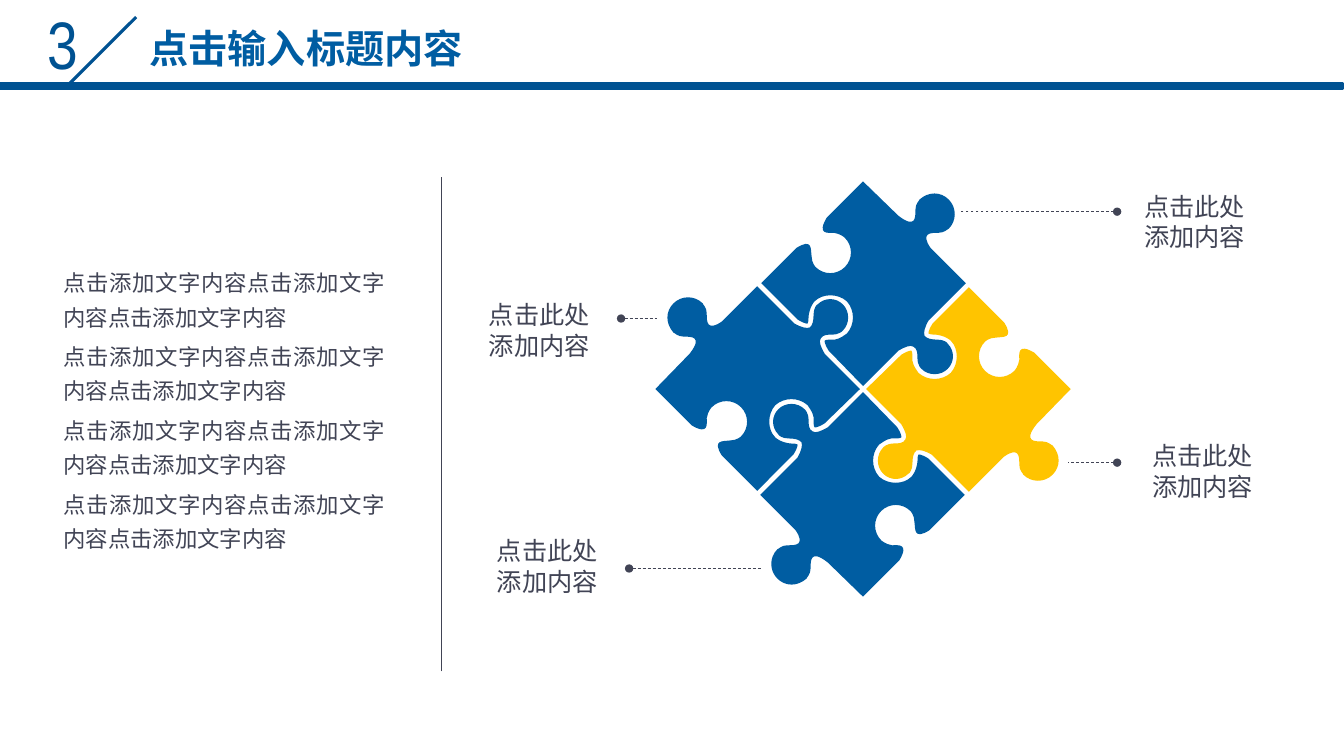
from pptx import Presentation
from pptx import util as u
from pptx.dml.color import RGBColor
from pptx.enum import dml, shapes, text
from pptx.oxml import ns, xmlchemy

Inches, Pt = u.Inches, u.Pt
CJK_FONT = "Noto Sans CJK SC"
BLUE, NAVY, YELLOW, GREY = "005DA2", "005292", "FFC400", "414455"

# Puzzle piece outline in inches: pairs are corners, sixes are Bezier curves
PUZZLE_CENTRE = (8.56, 3.86)
PIECE_START = (8.56, 1.8)
PIECE_OUTLINE = [
    # Upper right side, knob
    (8.91, 2.14),
    (9, 2.21, 9.04, 2.21, 9.06, 2.19), (9.08, 2.17, 9.08, 2.12, 9.08, 2.08),
    (9.08, 2.02, 9.12, 1.99, 9.12, 1.98), (9.21, 1.9, 9.33, 1.9, 9.41, 1.98),
    (9.49, 2.06, 9.49, 2.19, 9.41, 2.27), (9.4, 2.27, 9.37, 2.31, 9.31, 2.31),
    (9.27, 2.31, 9.22, 2.31, 9.2, 2.33), (9.18, 2.35, 9.18, 2.39, 9.23, 2.46),
    (9.58, 2.81),
    # Lower right side, knob
    (9.21, 3.18), (9.17, 3.25, 9.16, 3.3, 9.17, 3.33),
    (9.19, 3.36, 9.24, 3.37, 9.3, 3.37),
    (9.36, 3.37, 9.4, 3.4, 9.4, 3.41), (9.47, 3.48, 9.47, 3.59, 9.4, 3.66),
    (9.33, 3.73, 9.21, 3.73, 9.14, 3.66), (9.14, 3.66, 9.1, 3.63, 9.1, 3.55),
    (9.1, 3.51, 9.1, 3.46, 9.06, 3.44), (9.03, 3.42, 8.98, 3.44, 8.91, 3.48),
    (8.56, 3.83),
    # Lower left side, socket
    (8.22, 3.48), (8.17, 3.4, 8.18, 3.38, 8.18, 3.38),
    (8.19, 3.37, 8.22, 3.37, 8.28, 3.37),
    (8.34, 3.36, 8.38, 3.32, 8.4, 3.31), (8.48, 3.22, 8.48, 3.08, 8.4, 2.99),
    (8.31, 2.91, 8.16, 2.91, 8.08, 2.99), (8.07, 3, 8.03, 3.05, 8.02, 3.14),
    (8.02, 3.17, 8.02, 3.2, 8.01, 3.21), (8.01, 3.21, 7.99, 3.22, 7.91, 3.17),
    (7.55, 2.81),
    # Upper left side, socket
    (7.9, 2.46), (8.06, 2.36, 8.04, 2.47, 8.05, 2.54),
    (8.05, 2.61, 8.09, 2.65, 8.09, 2.65), (8.17, 2.73, 8.3, 2.73, 8.38, 2.65),
    (8.46, 2.57, 8.46, 2.44, 8.38, 2.36), (8.38, 2.36, 8.34, 2.32, 8.27, 2.31),
    (8.21, 2.31, 8.1, 2.33, 8.2, 2.16), (8.56, 1.8),
]


def colour(value):
    return RGBColor.from_string(value)


def format_text(frame, size, hex_colour, font=CJK_FONT, bold=False, spacing=None):
    for para in frame.paragraphs:
        if spacing:
            para.line_spacing = Pt(spacing)
        for span in para.runs:
            span.font.name, span.font.size = font, Pt(size)
            span.font.bold = bold
            span.font.color.rgb = colour(hex_colour)
            east_asian = xmlchemy.OxmlElement("a:ea")
            east_asian.set("typeface", font)
            span.font._element.find(ns.qn("a:latin")).addnext(east_asian)


def place(box, left, top, width, height):
    box.left, box.top = Inches(left), Inches(top)
    box.width, box.height = Inches(width), Inches(height)
    frame = box.text_frame
    frame.auto_size = text.MSO_AUTO_SIZE.NONE
    frame.vertical_anchor = text.MSO_ANCHOR.TOP
    frame.word_wrap = True
    return frame


def add_line(page, start, end, hex_colour, width, dotted_head=False):
    line = page.shapes.add_connector(
        shapes.MSO_CONNECTOR.STRAIGHT, *map(Inches, start + end))
    line.line.color.rgb = colour(hex_colour)
    line.line.width = Pt(width)
    if dotted_head:
        line.line.dash_style = dml.MSO_LINE.DASH
        head = xmlchemy.OxmlElement("a:headEnd")
        head.set("type", "oval")
        line.line._get_or_add_ln().append(head)
    line._element.spPr.append(xmlchemy.OxmlElement("a:effectLst"))


def turn(segment, quarter_turns):
    """Turn the points of a segment clockwise about the puzzle's centre."""
    centre_x, centre_y = PUZZLE_CENTRE
    turned = []
    for x, y in zip(segment[::2], segment[1::2]):
        dx, dy = x - centre_x, y - centre_y
        for _ in range(quarter_turns):
            dx, dy = -dy, dx
        turned.append((Inches(centre_x + dx), Inches(centre_y + dy)))
    return turned


def bend(piece, segments):
    """Replace the straight sides that have control points by curves."""
    sides = list(piece._element.iter(ns.qn("a:lnTo")))
    for side, points in zip(sides, segments):
        if len(points) == 1:
            continue
        curve = xmlchemy.OxmlElement("a:cubicBezTo")
        for x, y in points:
            point = xmlchemy.OxmlElement("a:pt")
            point.set("x", str(x - piece.left))
            point.set("y", str(y - piece.top))
            curve.append(point)
        side.getparent().replace(side, curve)


def add_piece(page, quarter_turns, hex_colour):
    segments = [turn(segment, quarter_turns) for segment in PIECE_OUTLINE]
    builder = page.shapes.build_freeform(*turn(PIECE_START, quarter_turns)[0])
    builder.add_line_segments([points[-1] for points in segments], close=True)
    piece = builder.convert_to_shape()
    bend(piece, segments)
    piece.shadow.inherit = False
    piece.fill.solid()
    piece.fill.fore_color.rgb = colour(hex_colour)
    piece.line.fill.background()


def add_label(page, left, top):
    frame = place(page.shapes.add_textbox(0, 0, 0, 0), left, top, 1.21, 0.71)
    frame.word_wrap = False
    frame.margin_top = Inches(0.07)
    frame.text = "点击此处\n添加内容"
    format_text(frame, 18, GREY, spacing=21.8)


def add_header(page):
    number = place(page.shapes.add_textbox(0, 0, 0, 0), 0.37, -0.03, 0.34, 0.91)
    number.text = "3"
    format_text(number, 48, NAVY, font="Arial Narrow")
    add_line(page, (1.35, 0.17), (0.68, 0.84), NAVY, 2.25)
    bar = page.shapes.add_shape(
        shapes.MSO_SHAPE.RECTANGLE, *map(Inches, (0, 0.83, 13.32, 0.05)))
    bar.shadow.inherit = False
    bar.fill.solid()
    bar.fill.fore_color.rgb = bar.line.color.rgb = colour(NAVY)
    bar.line.width = Pt(2)
    title = place(page.shapes.title, 1.24, 0.19, 3.59, 0.57)
    title.text = "点击输入标题内容"
    title.paragraphs[0].alignment = text.PP_ALIGN.CENTER
    format_text(title, 28, BLUE, bold=True, spacing=34)


def add_body(page):
    body = place(page.placeholders[1], 0.53, 2.54, 3.39, 3.72)
    body.text = "\n".join(["点击添加文字内容点击添加文字内容点击添加文字内容"] * 4)
    format_text(body, 16, GREY, spacing=24.8)
    for para in body.paragraphs:
        para.alignment = text.PP_ALIGN.JUSTIFY
        para.space_before = Pt(3.2)
        properties = para._p.get_or_add_pPr()
        properties.set("marL", "0")
        properties.set("indent", "0")
        properties.append(xmlchemy.OxmlElement("a:buNone"))


def main():
    deck = Presentation()
    deck.slide_width, deck.slide_height = Inches(13.33), Inches(7.5)
    page = deck.slides.add_slide(deck.slide_layouts[1])

    # Header and text column
    add_header(page)
    add_body(page)
    add_line(page, (4.38, 6.66), (4.38, 1.76), GREY, 0.25)

    # Puzzle, clockwise from the top
    for turns, fill in enumerate((BLUE, YELLOW, BLUE, BLUE)):
        add_piece(page, turns, fill)

    # Labels with leaders: label left and top, leader start, end and height
    for left, top, start, end, height in (
            (4.75, 2.9, 6.16, 6.52, 3.16),
            (11.25, 1.82, 11.08, 9.52, 2.1),
            (4.83, 5.24, 6.24, 7.55, 5.64),
            (11.33, 4.3, 11.08, 10.59, 4.59)):
        add_line(page, (start, height), (end, height), GREY, 0.5, dotted_head=True)
        add_label(page, left, top)

    deck.save("out.pptx")


if __name__ == "__main__":
    main()
